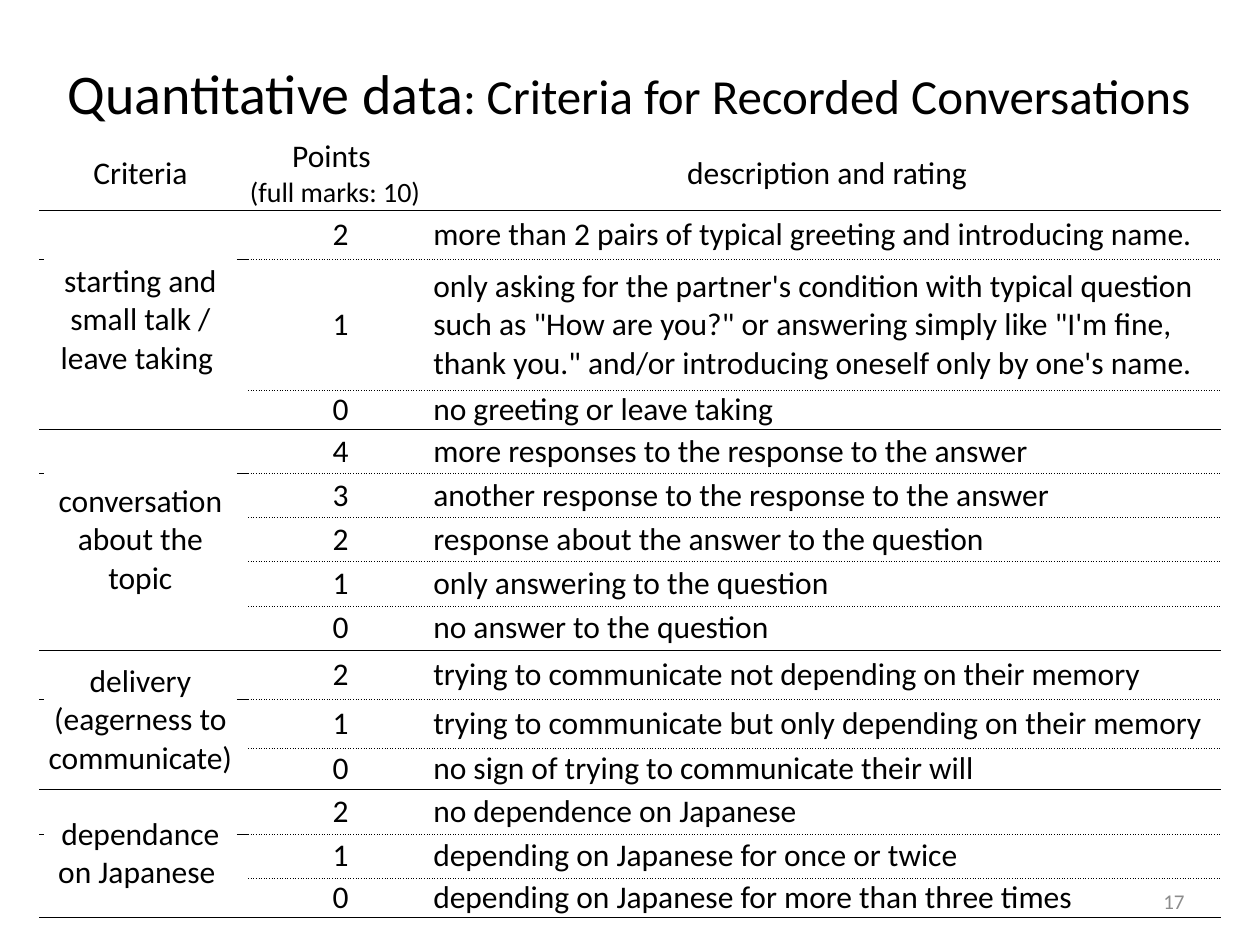
from dataclasses import dataclass

from lxml import etree
from pptx import Presentation
from pptx import util as u
from pptx.dml.color import RGBColor
from pptx.enum import text
from pptx.oxml import ns

FONT = "Calibri"
BLACK = "000000"
NO_GRID_STYLE = "{2D5ABB26-0587-4C30-8999-92F81FD0307C}"
COLUMN_WIDTHS = [0.03, 1.53, 0.09, 1.47, 6.25]
CRITERION, SPACER, POINTS, DESCRIPTION = 1, 2, 3, 4
HEADER_HEIGHT = 0.58


@dataclass
class Rating:
    description: str
    height: float = 0.35


@dataclass
class Criterion:
    name: str
    ratings: list[Rating]  # best first, the last one is worth 0 points


CRITERIA = [
    Criterion("starting and small talk / leave taking ", [
        Rating("more than 2 pairs of typical greeting and introducing name.", 0.39),
        Rating("only asking for the partner's condition with typical question such as "
               "\"How are you?\" or answering simply like \"I'm fine, thank you.\" "
               "and/or introducing oneself only by one's name.", 1.04),
        Rating("no greeting or leave taking", 0.31),
    ]),
    Criterion("conversation about the topic", [
        Rating("more responses to the response to the answer"),
        Rating("another response to the response to the answer"),
        Rating("response about the answer to the question"),
        Rating("only answering to the question"),
        Rating("no answer to the question"),
    ]),
    Criterion("delivery (eagerness to communicate)", [
        Rating("trying to communicate not depending on their memory", 0.39),
        Rating("trying to communicate but only depending on their memory", 0.39),
        Rating("no sign of trying to communicate their will", 0.33),
    ]),
    Criterion("dependance on Japanese ", [
        Rating("no dependence on Japanese"),
        Rating("depending on Japanese for once or twice"),
        Rating("depending on Japanese for more than three times", 0.31),
    ]),
]


def style_font(font, size: float, color: str = BLACK) -> None:
    font.name = FONT
    font.size = u.Pt(size)
    font.color.rgb = RGBColor.from_string(color)


def write_cell(cell, content: str, align=text.PP_ALIGN.CENTER, sizes=(18,)) -> None:
    """Write one paragraph per line, each with its own size."""
    cell.text = content
    for paragraph, size in zip(cell.text_frame.paragraphs, sizes):
        paragraph.alignment = align
        style_font(paragraph.font, size)


def add_border(cell, side: str, dash: str) -> None:
    properties = cell._tc.get_or_add_tcPr()
    line = etree.Element(ns.qn(f"a:ln{side}"), w=str(u.Pt(0.5)))
    fill = etree.SubElement(line, ns.qn("a:solidFill"))
    etree.SubElement(fill, ns.qn("a:srgbClr"), val=BLACK)
    etree.SubElement(line, ns.qn("a:prstDash"), val=dash)
    # Border lines come before the fill, top before bottom
    properties.insert(len(properties.findall(ns.qn("a:lnT"))), line)


def rule_below(table, row: int, dash: str, first_column: int = 0) -> None:
    for column in range(first_column, len(COLUMN_WIDTHS)):
        if row + 1 < len(table.rows):
            add_border(table.cell(row + 1, column), "T", dash)
        add_border(table.cell(row, column), "B", dash)


def add_title(slide) -> None:
    title = slide.shapes.title
    title.left, title.top, title.width, title.height = map(
        u.Inches, (0.31, 0.3, 9.45, 0.87))
    title.text_frame.vertical_anchor = text.MSO_ANCHOR.MIDDLE
    paragraph = title.text_frame.paragraphs[0]
    paragraph.alignment = text.PP_ALIGN.CENTER
    for content, size in (("Quantitative data", 32), (": ", 27),
                          ("Criteria for Recorded Conversations ", 28)):
        run = paragraph.add_run()
        run.text = content
        style_font(run.font, size)


def add_blank_table(slide):
    heights = [HEADER_HEIGHT] + [rating.height for criterion in CRITERIA
                                 for rating in criterion.ratings]
    frame = slide.shapes.add_table(
        len(heights), len(COLUMN_WIDTHS), u.Inches(0.31), u.Inches(1.09),
        u.Inches(sum(COLUMN_WIDTHS)), u.Inches(sum(heights)))
    table = frame.table
    table.first_row = table.horz_banding = False
    table._tbl.tblPr.find(ns.qn("a:tableStyleId")).text = NO_GRID_STYLE
    for column, width in zip(table.columns, COLUMN_WIDTHS):
        column.width = u.Inches(width)
    for row, height in zip(table.rows, heights):
        row.height = u.Inches(height)
    for cell in table.iter_cells():
        cell.fill.background()
        cell.margin_left = cell.margin_right = cell.margin_top = cell.margin_bottom = 0
        cell.vertical_anchor = text.MSO_ANCHOR.MIDDLE
    return table


def add_criteria_table(slide) -> None:
    table = add_blank_table(slide)
    write_cell(table.cell(0, CRITERION), "Criteria")
    table.cell(0, SPACER).merge(table.cell(0, POINTS))
    write_cell(table.cell(0, SPACER), "Points \n(full marks: 10)", sizes=(18, 16))
    write_cell(table.cell(0, DESCRIPTION), "description and rating")
    rule_below(table, 0, "solid")

    first = 1
    for criterion in CRITERIA:
        last = first + len(criterion.ratings) - 1
        table.cell(first, CRITERION).merge(table.cell(last, CRITERION))
        write_cell(table.cell(first, CRITERION), criterion.name)
        for row, rating in enumerate(criterion.ratings, first):
            write_cell(table.cell(row, POINTS), str(last - row))
            write_cell(table.cell(row, DESCRIPTION), rating.description,
                       text.PP_ALIGN.LEFT)
            if row < last:
                rule_below(table, row, "sysDot", POINTS)
        rule_below(table, last, "solid")
        # A merged cell takes its bottom border from its first cell
        add_border(table.cell(first, CRITERION), "B", "solid")
        first = last + 1


def add_slide_number(slide) -> None:
    box = slide.shapes.add_textbox(
        u.Inches(7.17), u.Inches(6.95), u.Inches(2.33), u.Inches(0.4))
    box.text_frame.word_wrap = True
    box.text_frame.vertical_anchor = text.MSO_ANCHOR.MIDDLE
    paragraph = box.text_frame.paragraphs[0]
    paragraph.text = "17"
    paragraph.alignment = text.PP_ALIGN.RIGHT
    style_font(paragraph.font, 12, "8C8C8C")


def main() -> None:
    presentation = Presentation()
    presentation.slide_width = u.Inches(10)
    presentation.slide_height = u.Inches(7.5)
    slide = presentation.slides.add_slide(presentation.slide_layouts[5])
    add_title(slide)
    add_criteria_table(slide)
    add_slide_number(slide)
    presentation.save("out.pptx")


if __name__ == "__main__":
    main()
